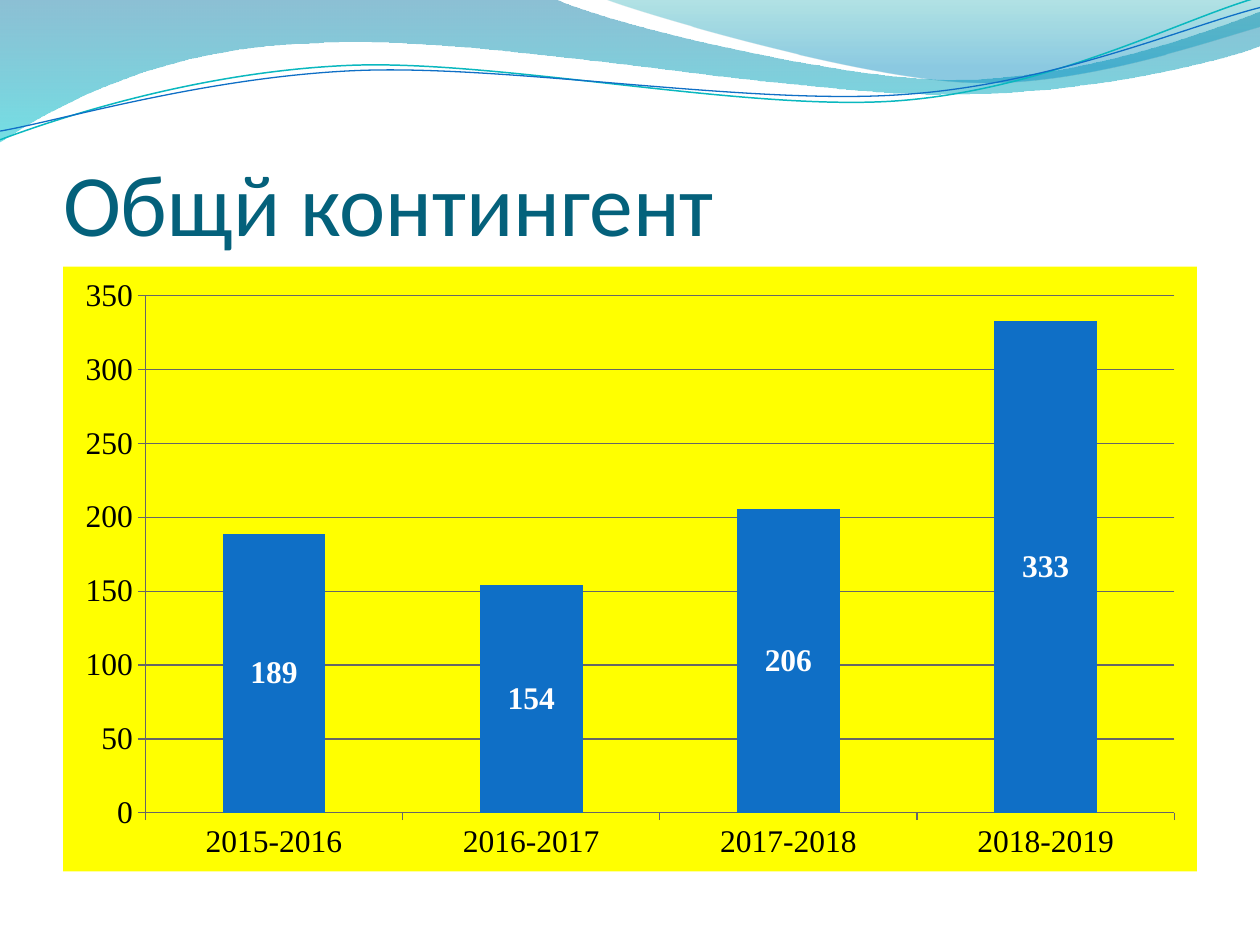
"""Build a slide with a wave header and a column chart of total enrolment."""
import pptx
import pptx.chart.data
import pptx.dml.color
import pptx.enum.chart
import pptx.enum.text
import pptx.oxml
import pptx.oxml.ns
import pptx.util

COLORS = {
    "title": "04617B", "text": "000000", "label": "FFFFFF", "chart": "FFFF00",
    "column": "0F6FC6", "axis": "666666", "teal": "0AB8BF",
    "back_top": "0074A1", "back_bottom": "00C6CF",
    "front_top": "00A1A9", "front_bottom": "008BBF",
}
BACK_WAVE = [
    (0, 0), (316.8, -0.7),
    (342.7, 12.2, 478.1, 45.4, 545.8, 45.4), (614.2, 45.4, 689.8, 18.7, 720, 6.5),
    (720.7, 25.9), (707.8, 31.7, 626.4, 54.7, 537.1, 54),
    (447.8, 54, 275, 20.2, 185, 24.5), (92.9, 25.9, 33.1, 59.8, -0.7, 81.4), (0, 0),
]
FRONT_WAVE = [
    (344.9, -0.7), (366.5, 7.9, 491, 44.6, 553.7, 46.8),
    (616.3, 49.7, 691.9, 23, 720, 15.1), (720, 0), (344.9, -0.7),
]
TEAL_LINE = [
    (0, 79.9), (34.6, 67, 113.8, 41, 199.4, 37.4),
    (284.4, 33.8, 427, 64.1, 513.4, 57.6), (599.8, 51.1, 675.4, 10.8, 718.6, -1.4),
]
BLUE_LINE = [
    (0, 74.9), (33.8, 69.1, 118.1, 43.9, 203.8, 40.3),
    (290.2, 36.7, 429.8, 60.5, 516.2, 54), (601.9, 48.2, 677.5, 15.1, 720, 4.3),
]
ENROLMENT = {"2015-2016": 189, "2016-2017": 154, "2017-2018": 206, "2018-2019": 333}


def rgb(name):
    """Return the named colour."""
    return pptx.dml.color.RGBColor.from_string(COLORS[name])


def bend(shape, line, segment):
    """Replace a straight outline segment with a cubic curve."""
    points = "".join(
        f'<a:pt x="{pptx.util.Pt(x) - shape.left}" y="{pptx.util.Pt(y) - shape.top}"/>'
        for x, y in zip(segment[::2], segment[1::2]))
    curve = pptx.oxml.parse_xml(
        f'<a:cubicBezTo {pptx.oxml.ns.nsdecls("a")}>{points}</a:cubicBezTo>')
    line.getparent().replace(line, curve)


def add_outline(slide, segments, close):
    """Add a freeform of lines and curves without a shadow."""
    points = [tuple(map(pptx.util.Pt, segment[-2:])) for segment in segments]
    builder = slide.shapes.build_freeform(*points[0])
    builder.add_line_segments(points[1:], close=close)
    shape = builder.convert_to_shape()
    shape.shadow.inherit = False
    lines = list(shape._element.iter(pptx.oxml.ns.qn("a:lnTo")))
    for line, segment in zip(lines, segments[1:]):
        if len(segment) == 6:
            bend(shape, line, segment)
    return shape


def add_wave(slide, segments, stops):
    """Add a wave with a translucent gradient running downwards."""
    shape = add_outline(slide, segments, True)
    shape.line.fill.background()
    shape.fill.gradient()
    shape.fill.gradient_angle = 270
    for stop, (position, color, _) in zip(shape.fill.gradient_stops, stops):
        stop.position = position
        stop.color.rgb = rgb(color)
    elements = shape._element.spPr.iter(pptx.oxml.ns.qn("a:srgbClr"))
    for element, (_, _, opacity) in zip(list(elements), stops):
        alpha = pptx.oxml.parse_xml(
            f'<a:alpha {pptx.oxml.ns.nsdecls("a")} val="{opacity * 1000}"/>')
        element.append(alpha)


def add_curve(slide, segments, color, width):
    """Add an open curved line."""
    shape = add_outline(slide, segments, False)
    shape.fill.background()
    shape.line.color.rgb = rgb(color)
    shape.line.width = pptx.util.Pt(width)


def set_title(slide, text):
    """Place and format the title."""
    title = slide.shapes.title
    title.left, title.top, title.width, title.height = map(
        pptx.util.Pt, (36, 55.4, 648, 90))
    frame = title.text_frame
    frame.word_wrap = True
    frame.auto_size = pptx.enum.text.MSO_AUTO_SIZE.NONE
    frame.vertical_anchor = pptx.enum.text.MSO_ANCHOR.BOTTOM
    frame.margin_left = frame.margin_right = frame.margin_bottom = 0
    frame.margin_top = pptx.util.Pt(3.6)
    paragraph = frame.paragraphs[0]
    paragraph.alignment = pptx.enum.text.PP_ALIGN.LEFT
    run = paragraph.add_run()
    run.text = text
    run.font.name = "Calibri"
    run.font.size = pptx.util.Pt(50)
    run.font.color.rgb = rgb("title")


def format_line(line):
    """Give an axis or grid line its colour and width."""
    line.color.rgb = rgb("axis")
    line.width = pptx.util.Pt(0.75)


def set_chart_font(font, color, bold=False):
    """Format chart text."""
    font.name = "Times New Roman"
    font.size = pptx.util.Pt(18)
    font.bold = bold
    font.color.rgb = rgb(color)


def fill_chart_area(chart, color):
    """Fill the chart background and leave it without a border."""
    properties = pptx.oxml.parse_xml(
        f'<c:spPr {pptx.oxml.ns.nsdecls("c", "a")}><a:solidFill>'
        f'<a:srgbClr val="{COLORS[color]}"/></a:solidFill>'
        '<a:ln><a:noFill/></a:ln></c:spPr>')
    chart._chartSpace.find(pptx.oxml.ns.qn("c:chart")).addnext(properties)


def add_enrolment_chart(slide):
    """Add the column chart."""
    data = pptx.chart.data.CategoryChartData()
    data.categories = list(ENROLMENT)
    data.add_series("Series 1", list(ENROLMENT.values()))
    chart = slide.shapes.add_chart(
        pptx.enum.chart.XL_CHART_TYPE.COLUMN_STACKED,
        *map(pptx.util.Pt, (36, 152.4, 648, 345.6)), data).chart
    chart.has_title = False
    chart.has_legend = False
    set_chart_font(chart.font, "text")
    fill_chart_area(chart, "chart")
    for axis in (chart.category_axis, chart.value_axis):
        axis.major_tick_mark = pptx.enum.chart.XL_TICK_MARK.OUTSIDE
        axis.minor_tick_mark = pptx.enum.chart.XL_TICK_MARK.NONE
        format_line(axis.format.line)
    values = chart.value_axis
    values.minimum_scale, values.maximum_scale, values.major_unit = 0, 350, 50
    values.has_major_gridlines = True
    format_line(values.major_gridlines.format.line)
    plot = chart.plots[0]
    plot.gap_width = 150
    plot.overlap = 100
    plot.vary_by_categories = False
    series = plot.series[0]
    series.format.fill.solid()
    series.format.fill.fore_color.rgb = rgb("column")
    labels = series.data_labels
    labels.show_value = True
    labels.position = pptx.enum.chart.XL_LABEL_POSITION.CENTER
    set_chart_font(labels.font, "label", True)


def main():
    """Build and save the presentation."""
    presentation = pptx.Presentation()
    presentation.slide_width = pptx.util.Pt(720)
    presentation.slide_height = pptx.util.Pt(540)
    slide = presentation.slides.add_slide(presentation.slide_layouts[5])
    add_wave(slide, BACK_WAVE, [(0, "back_top", 45), (1, "back_bottom", 55)])
    add_wave(slide, FRONT_WAVE, [(0, "front_top", 30), (0.8, "front_bottom", 45)])
    add_curve(slide, TEAL_LINE, "teal", 0.85)
    add_curve(slide, BLUE_LINE, "column", 0.75)
    set_title(slide, "Общй контингент")
    add_enrolment_chart(slide)
    presentation.save("out.pptx")


if __name__ == "__main__":
    main()
